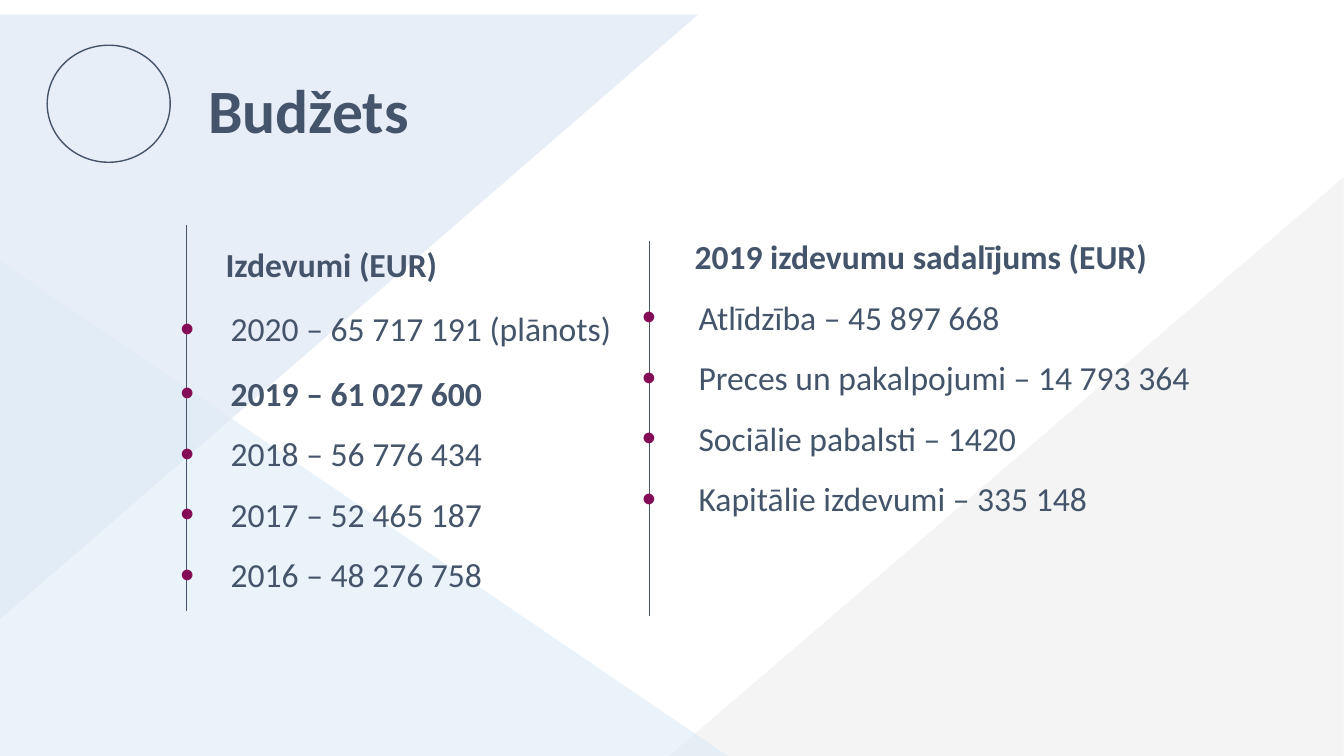
"""Build the budget slide with two bulleted lists."""
from dataclasses import dataclass

from lxml import etree
from pptx import Presentation
from pptx.dml.color import RGBColor
from pptx.enum.shapes import MSO_CONNECTOR, MSO_SHAPE
from pptx.enum.text import MSO_ANCHOR, MSO_AUTO_SIZE, PP_ALIGN
from pptx.oxml.ns import qn
from pptx.util import Cm, Pt

STRAIGHT = MSO_CONNECTOR.STRAIGHT
WEDGE, OVAL = MSO_SHAPE.RIGHT_TRIANGLE, MSO_SHAPE.OVAL
TOP, MIDDLE = MSO_ANCHOR.TOP, MSO_ANCHOR.MIDDLE
NO_FIT, LEFT = MSO_AUTO_SIZE.NONE, PP_ALIGN.LEFT
INK, DOT, FONT = "44546A", "840B55", "Calibri"
Box = tuple[float, float, float, float]


@dataclass
class Wedge:
    """A pale background triangle."""
    box: Box
    color: str
    turn: int = 0
    flip: bool = False


@dataclass
class Row:
    """One line of a list."""
    text: str
    bold: bool = False
    space: float = 1.5


@dataclass
class Column:
    """A headed list in a body placeholder."""
    slot: int
    box: Box
    inset: float
    hang: float
    head: str
    rows: list[Row]


@dataclass
class Rule:
    """A thin upright line."""
    x: float
    top: float
    end: float


WEDGES = [
    Wedge((1.17, -0.81, 15.24, 17.6), "DAE3F3", turn=90),
    Wedge((14.96, 4.47, 18.9, 16.21), "EDEDED", flip=True),
    Wedge((0, 6.58, 18.9, 12.85), "DEEBF7"),
]
RULES = [Rule(4.7, 5.66, 15.39), Rule(16.36, 6.07, 15.52)]
COLUMNS = [
    Column(2, (15.93, 5.32, 14.96, 9.45), 1.32, 1.42,
           "2019 izdevumu sadalījums (EUR)",
           [Row("Atlīdzība – 45 897 668"),
            Row("Preces un pakalpojumi – 14 793 364"),
            Row("Sociālie pabalsti – 1420"),
            Row("Kapitālie izdevumi – 335 148")]),
    Column(1, (4.29, 5.51, 16.94, 9.53), 1.14, 1.27,
           "Izdevumi (EUR)",
           [Row("2020 – 65 717 191 (plānots)", space=1.6),
            Row("2019 – 61 027 600", bold=True, space=1.6),
            Row("2018 – 56 776 434"),
            Row("2017 – 52 465 187"),
            Row("2016 – 48 276 758")]),
]


def style(item, values: dict) -> None:
    """Set each named value on an object."""
    for name, value in values.items():
        setattr(item, name, value)


def tint(color, code: str) -> None:
    """Set a colour from a hex string."""
    color.rgb = RGBColor.from_string(code)


def place(shape, box: Box) -> None:
    """Move and size a shape in centimetres."""
    names = ("left", "top", "width", "height")
    style(shape, dict(zip(names, map(Cm, box))))


def draw_wedge(slide, wedge: Wedge) -> None:
    """Draw a translucent triangle."""
    shape = slide.shapes.add_shape(WEDGE, *map(Cm, wedge.box))
    shape.shadow.inherit = False
    shape.rotation = wedge.turn
    if wedge.flip:
        shape._element.spPr.find(qn("a:xfrm")).set("flipH", "1")
    shape.fill.solid()
    tint(shape.fill.fore_color, wedge.color)
    shape.line.fill.background()
    code = shape._element.spPr.find(".//" + qn("a:srgbClr"))
    etree.SubElement(code, qn("a:alpha"), val="60000")


def draw_ring(slide, box: Box) -> None:
    """Draw the outlined ellipse beside the title."""
    ring = slide.shapes.add_shape(OVAL, *map(Cm, box))
    ring.shadow.inherit = False
    ring.fill.background()
    tint(ring.line.color, INK)
    ring.line.width = Pt(1)


def draw_rule(slide, rule: Rule) -> None:
    """Draw an upright line."""
    ends = map(Cm, (rule.x, rule.top, rule.x, rule.end))
    line = slide.shapes.add_connector(STRAIGHT, *ends)
    tint(line.line.color, INK)
    line.line.width = Pt(0.5)
    etree.SubElement(line._element.spPr, qn("a:effectLst"))


def open_text(slide, slot: int, box: Box, anchor):
    """Bring a placeholder to the front and return its text frame."""
    shape = slide.placeholders[slot]
    slide.shapes._spTree.append(shape._element)
    place(shape, box)
    frame = shape.text_frame
    style(frame, {"word_wrap": True, "auto_size": NO_FIT,
                  "vertical_anchor": anchor})
    return frame


def write(para, row: Row, size: int) -> None:
    """Fill a paragraph with formatted text."""
    style(para, {"alignment": LEFT, "line_spacing": row.space,
                 "space_before": Pt(0), "space_after": Pt(0)})
    run = para.add_run()
    run.text = row.text
    style(run.font, {"name": FONT, "size": Pt(size), "bold": row.bold})
    tint(run.font.color, INK)


def indent(para, left: float, first: float, dot: bool) -> None:
    """Set the indents and the bullet of a paragraph."""
    props = para._p.get_or_add_pPr()
    props.set("marL", str(Cm(left)))
    props.set("indent", str(Cm(first)))
    if not dot:
        etree.SubElement(props, qn("a:buNone"))
        return
    color = etree.SubElement(props, qn("a:buClr"))
    etree.SubElement(color, qn("a:srgbClr"), val=DOT)
    etree.SubElement(props, qn("a:buSzPct"), val="117000")
    etree.SubElement(props, qn("a:buFont"), typeface="Arial")
    etree.SubElement(props, qn("a:buChar"), char="•")


def draw_column(slide, column: Column) -> None:
    """Write a heading and its bulleted rows."""
    frame = open_text(slide, column.slot, column.box, TOP)
    head = frame.paragraphs[0]
    indent(head, column.inset, 0, False)
    write(head, Row(column.head, bold=True), 24)
    for row in column.rows:
        para = frame.add_paragraph()
        indent(para, column.hang, -column.hang, True)
        write(para, row, 24)


def main() -> None:
    """Build and save the slide."""
    deck = Presentation()
    style(deck, {"slide_width": Cm(33.87), "slide_height": Cm(19.05)})
    slide = deck.slides.add_slide(deck.slide_layouts[3])
    for wedge in WEDGES:
        draw_wedge(slide, wedge)
    title = open_text(slide, 0, (5, 1.02, 22.73, 3.68), MIDDLE)
    write(title.paragraphs[0], Row("Budžets", bold=True, space=0.9), 44)
    draw_ring(slide, (1.19, 1.14, 3.1, 2.95))
    for rule in RULES:
        draw_rule(slide, rule)
    for column in COLUMNS:
        draw_column(slide, column)
    deck.save("out.pptx")


if __name__ == "__main__":
    main()
